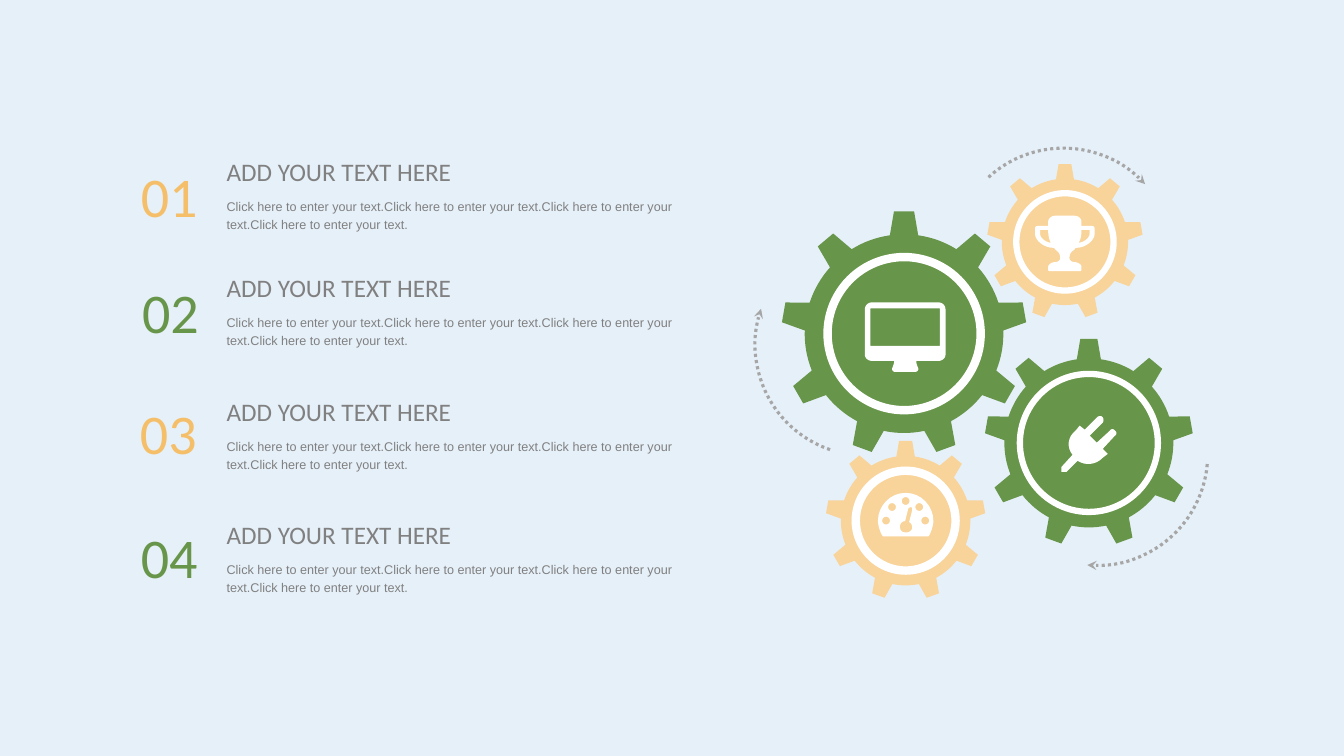
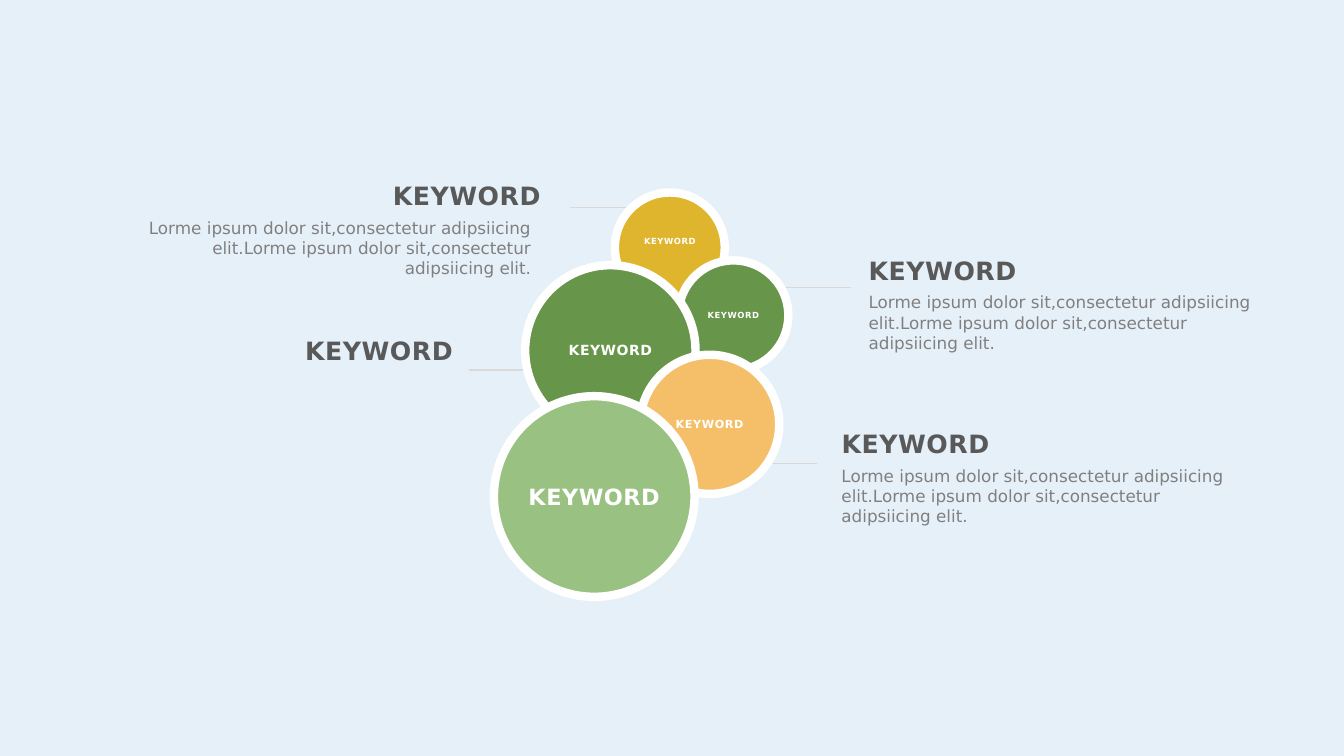
from math import cos, radians, sin

from lxml.etree import SubElement
from pptx import Presentation
from pptx.dml.color import RGBColor
from pptx.enum.dml import MSO_LINE
from pptx.enum.shapes import MSO_CONNECTOR, MSO_SHAPE
from pptx.enum.text import MSO_ANCHOR, PP_ALIGN
from pptx.oxml.ns import qn
from pptx.util import Pt

BACKGROUND, WHITE = "E6F0F9", "FFFFFF"
GREEN, LIGHT_GREEN = "679549", "99C282"
ORANGE, PALE_ORANGE, GOLD = "F5BF6A", "F8D49B", "E0B52E"
GREY, DARK_GREY, ARROW_GREY, RULE_GREY = "808080", "595959", "A6A6A6", "D9D9D9"
LEFT, CENTER, RIGHT = PP_ALIGN.LEFT, PP_ALIGN.CENTER, PP_ALIGN.RIGHT
KEYWORD_STYLE = dict(font="DejaVu Sans", bold=True, spacing=0.4)

# Slide 1: numbered list, gears, arrows
ITEM_TITLE = "ADD YOUR TEXT HERE"
ITEM_TEXT = " ".join(["Click here to enter your text."] * 4).replace(". ", ".")
# number, colour, number left, number top, title top
ITEMS = [
    ("01", ORANGE, 91.4, 115.2, 108),
    ("02", GREEN, 92.2, 198, 190.8),
    ("03", ORANGE, 90.7, 284.4, 279.4),
    ("04", GREEN, 91.4, 373, 367.2),
]
ARROWS = [(680.4, 105.8, 317.5), (539.3, 167, 198.9), (704.2, 245.5, 94.9)]
ARROW_SIZE = 158.4

TEETH = 9
ROOT_RATIO = 0.81          # body radius against tip radius
TIP_ANGLE, ROOT_ANGLE = 4.7, 8.2   # half-widths of a tooth, in degrees

# Icon outlines: a pair is a corner, six numbers are a Bézier curve.
MONITOR_HALF = [
    (28.8, 0), (52.6, 0), (55.4, 0, 57.6, 2.2, 57.6, 5), (57.6, 37.4),
    (57.6, 39.6, 55.4, 41.8, 52.6, 41.8), (36.7, 41.8),
    (36.7, 44.6, 38.2, 46.8, 38.2, 47.5), (38.2, 49, 36.7, 49.7, 36, 49.7),
    (28.8, 49.7),
]
SCREEN = [(4, 4.3), (53.6, 4.3), (53.6, 31), (4, 31)]
TROPHY_HALF = [
    (21.2, 0), (28.1, 0), (31, 0, 33.1, 2.2, 33.1, 4.3), (33.1, 7.2),
    (39.6, 7.2), (41.8, 7.2, 42.5, 7.9, 42.5, 9.4), (42.5, 13),
    (42.5, 17.3, 36.7, 23, 28.8, 23), (28.1, 24.5, 26.6, 25.2, 26.6, 25.2),
    (25.2, 26.6, 24.5, 28.1, 24.5, 30.2), (24.5, 31, 25.2, 33.1, 28.1, 33.1),
    (30.2, 33.1, 33.1, 34.6, 33.1, 36.7), (33.1, 38.9), (32.4, 39.6),
    (21.2, 39.6),
]
HANDLE_HOLE = [
    (38.9, 10.1), (33.1, 10.1), (33.1, 14.4, 32.4, 17.3, 31, 19.4),
    (36, 18.7, 38.9, 15.1, 38.9, 13),
]
GAUGE_HALF = [
    (19.8, 0), (31, 0, 39.6, 9.4, 39.6, 20),
    (39.6, 23, 38.2, 27.4, 36.7, 30.2), (36, 31), (19.8, 31),
]
NEEDLE = [
    (24.5, 12.2), (24.5, 11.5, 24.5, 10.8, 23.8, 10.1),
    (23, 10.1, 21.6, 10.8, 21.6, 11.5), (19.4, 20.2),
    (18, 20.2, 16.6, 20.9, 15.8, 23), (15.1, 25.2, 16.6, 28.1, 18.7, 28.1),
    (21.6, 28.8, 23.8, 27.4, 24.5, 25.2), (24.5, 23, 23.8, 21.6, 22.3, 20.9),
]
GAUGE_DOTS = [(5.8, 19.8), (10.1, 10.1), (19.8, 5.8), (29.5, 10.1), (33.8, 19.8)]
GAUGE_DOT_RADIUS = 2.8
PLUG = [
    (38.2, 14.4), (29.5, 23.8), (33.1, 27.4), (29.5, 30.2),
    (24.5, 35.3, 17.3, 36, 11.5, 32.4), (3.6, 40.3), (0, 40.3), (0, 36.7),
    (7.9, 28.1), (3.6, 23, 4.3, 15.1, 10.1, 10.8), (13, 7.2), (16.6, 10.1),
    (25.2, 1.4), (26.6, 0, 28.8, 0, 29.5, 1.4), (30.2, 2.2, 30.2, 4.3, 29.5, 5),
    (20.2, 14.4), (25.2, 19.4), (34.6, 10.8),
    (35.3, 9.4, 37.4, 9.4, 38.2, 10.8), (39.6, 11.5, 39.6, 13.7, 38.2, 14.4),
]

# Slide 2: keyword circles and callouts
KEYWORD = "KEYWORD"
CALLOUT_TEXT = "Lorme ipsum dolor sit,consectetur adipsiicing elit." * 2
# left, top, diameter, colour, text size, bottom inset
CIRCLES = [
    (439.2, 137.5, 78.5, GOLD, 6, 8.6),
    (484.6, 186, 78.5, GREEN, 6, 0),
    (375.1, 189.4, 121.7, GREEN, 10, 0),
    (457.2, 253.4, 99.4, ORANGE, 8, 0),
    (352.8, 283, 143.3, LIGHT_GREEN, 16, 0),
]
RULES = [(406.8, 148.3), (525.6, 331.2), (549.4, 205.2), (334.8, 264.2)]
RULE_LENGTH = 58.3
# heading left, heading top, heading alignment, body left (or None), body alignment
CALLOUTS = [
    (269.3, 125.3, CENTER, 87.1, RIGHT),
    (206.6, 236.2, CENTER, None, None),
    (613.4, 178.6, LEFT, 613.4, LEFT),
    (594, 302.4, LEFT, 594, LEFT),
]


def rgb(value):
    return RGBColor.from_string(value)


def new_slide(prs):
    s = prs.slides.add_slide(prs.slide_layouts[6])
    s.background.fill.solid()
    s.background.fill.fore_color.rgb = rgb(BACKGROUND)
    return s


def paint(sp, fill=None, line=None, width=0):
    sp.shadow.inherit = False
    if fill:
        sp.fill.solid()
        sp.fill.fore_color.rgb = rgb(fill)
    else:
        sp.fill.background()
    if line:
        sp.line.color.rgb = rgb(line)
        sp.line.width = Pt(width)
    else:
        sp.line.fill.background()


def write(sp, text, size, color, font, align=LEFT, bold=False, spacing=0,
          anchor=MSO_ANCHOR.TOP, insets=(7.2, 3.6, 7.2, 3.6), line_spacing=None):
    """Set one styled paragraph; insets run left, top, right, bottom."""
    tf = sp.text_frame
    tf.word_wrap = True
    tf.vertical_anchor = anchor
    (tf.margin_left, tf.margin_top,
     tf.margin_right, tf.margin_bottom) = map(Pt, insets)
    tf.text = text
    p = tf.paragraphs[0]
    p.alignment = align
    if line_spacing:
        p.line_spacing = line_spacing
    r = p.runs[0]
    r.font.size, r.font.name, r.font.bold = Pt(size), font, bold
    r.font.color.rgb = rgb(color)
    if spacing:
        r._r.get_or_add_rPr().set("spc", str(round(spacing * 100)))


def add_text(s, left, top, width, height, *args, **style):
    write(s.shapes.add_textbox(Pt(left), Pt(top), Pt(width), Pt(height)), *args, **style)


def add_circle(s, left, top, size, fill, width, kind=MSO_SHAPE.OVAL):
    sp = s.shapes.add_shape(kind, Pt(left), Pt(top), Pt(size), Pt(size))
    paint(sp, fill, WHITE, width)
    return sp


def polar(radius, degrees, cx=0, cy=0):
    """Point at a clockwise angle from the top."""
    a = radians(degrees)
    return cx + radius * sin(a), cy - radius * cos(a)


def flatten(outline, steps=8):
    """Turn corners and Bézier curves into a plain list of points."""
    points = []
    for part in outline:
        if len(part) == 2:
            points.append(part)
            continue
        knots = [points[-1], part[:2], part[2:4], part[4:]]
        for i in range(1, steps + 1):
            t = i / steps
            weights = ((1 - t) ** 3, 3 * t * (1 - t) ** 2, 3 * t * t * (1 - t), t ** 3)
            points.append(tuple(sum(w * k[axis] for w, k in zip(weights, knots))
                                for axis in (0, 1)))
    return points


def mirror(points, axis):
    return [(2 * axis - x, y) for x, y in reversed(points)]


def symmetric(half):
    points = flatten(half)
    return points + mirror(points, half[0][0])


def add_outline(s, contours, left, top, fill):
    """Draw contours as one shape; inner contours become holes."""
    placed = [[(Pt(left + x), Pt(top + y)) for x, y in c] for c in contours]
    builder = s.shapes.build_freeform(*placed[0][0], scale=1.0)
    for i, contour in enumerate(placed):
        if i:
            builder.move_to(*contour[0])
        builder.add_line_segments(contour[1:], close=True)
    paint(builder.convert_to_shape(), fill)


def gear_points(radius):
    pitch, steps = 360 / TEETH, 8
    root = radius * ROOT_RATIO
    gap = pitch - 2 * ROOT_ANGLE
    points = []
    for tooth in range(TEETH):
        middle = tooth * pitch
        points += [polar(radius, middle - TIP_ANGLE), polar(radius, middle + TIP_ANGLE)]
        points += [polar(root, middle + ROOT_ANGLE + gap * i / steps)
                   for i in range(steps + 1)]
    return points


def add_arrow(s, left, top, rotation):
    sp = s.shapes.add_shape(MSO_SHAPE.ARC, Pt(left), Pt(top), Pt(ARROW_SIZE), Pt(ARROW_SIZE))
    sp.rotation = rotation
    paint(sp, line=ARROW_GREY, width=2.25)
    sp.line.dash_style = MSO_LINE.ROUND_DOT
    SubElement(sp.line._get_or_add_ln(), qn("a:tailEnd")).set("type", "stealth")


def add_rule(s, left, y):
    c = s.shapes.add_connector(MSO_CONNECTOR.STRAIGHT, Pt(left), Pt(y),
                               Pt(left + RULE_LENGTH), Pt(y))
    c.line.color.rgb = rgb(RULE_GREY)
    c.line.width = Pt(1)
    SubElement(c._element.spPr, qn("a:effectLst"))


def build_gears(prs):
    s = new_slide(prs)
    handle = flatten(HANDLE_HOLE)
    monitor = [symmetric(MONITOR_HALF), SCREEN]
    trophy = [symmetric(TROPHY_HALF), handle, mirror(handle, TROPHY_HALF[0][0])]
    dots = [[polar(GAUGE_DOT_RADIUS, a, x, y) for a in range(0, 360, 20)]
            for x, y in GAUGE_DOTS]
    gauge = [symmetric(GAUGE_HALF), flatten(NEEDLE)] + dots
    plug = [flatten(PLUG)]
    # centre x, centre y, tip radius, colour, ring diameter, ring width, icon, icon left, top
    gears = [
        (645.8, 238.3, 87.6, GREEN, 109.4, 6, monitor, 617.8, 216),
        (777.8, 316.4, 74.5, GREEN, 98.6, 4.5, plug, 758.2, 296.8),
        (646.9, 371.9, 57.1, PALE_ORANGE, 71.3, 6, gauge, 627.1, 352.1),
        (760.7, 172.8, 55.7, PALE_ORANGE, 69.5, 4.5, trophy, 739.4, 154.1),
    ]
    for cx, cy, radius, color, ring, width, icon, left, top in gears:
        add_outline(s, [gear_points(radius)], cx, cy, color)
        add_circle(s, cx - ring / 2, cy - ring / 2, ring, color, width)
        add_outline(s, icon, left, top, WHITE)
    for arrow in ARROWS:
        add_arrow(s, *arrow)
    for number, color, left, number_top, top in ITEMS:
        add_text(s, left, number_top, 59, 48.2, number, 40, color, "Calibri",
                 align=CENTER, anchor=MSO_ANCHOR.BOTTOM, insets=(0, 0, 0, 0))
        add_text(s, 154.8, top, 247, 28.8, ITEM_TITLE, 18, GREY, "Calibri")
        add_text(s, 154.8, top + 28.6, 334.1, 33.1, ITEM_TEXT, 9, GREY, "Arial",
                 line_spacing=1.2)


def build_keywords(prs):
    s = new_slide(prs)
    for rule in RULES:
        add_rule(s, *rule)
    for left, top, size, color, text_size, bottom in CIRCLES:
        sp = add_circle(s, left, top, size, color, 6, MSO_SHAPE.FLOWCHART_CONNECTOR)
        write(sp, KEYWORD, text_size, WHITE, align=CENTER, anchor=MSO_ANCHOR.MIDDLE,
              insets=(0, 0, 0, bottom), **KEYWORD_STYLE)
    for left, top, align, body_left, body_align in CALLOUTS:
        add_text(s, left, top, 128.2, 28.8, KEYWORD, 18, DARK_GREY, align=align,
                 **KEYWORD_STYLE)
        if body_left is not None:
            add_text(s, body_left, top + 26.6, 299.5, 50.4, CALLOUT_TEXT, 12, GREY,
                     "DejaVu Sans", align=body_align)


def main():
    prs = Presentation()
    prs.slide_width, prs.slide_height = Pt(960), Pt(540)
    build_gears(prs)
    build_keywords(prs)
    prs.save("out.pptx")


if __name__ == "__main__":
    main()
